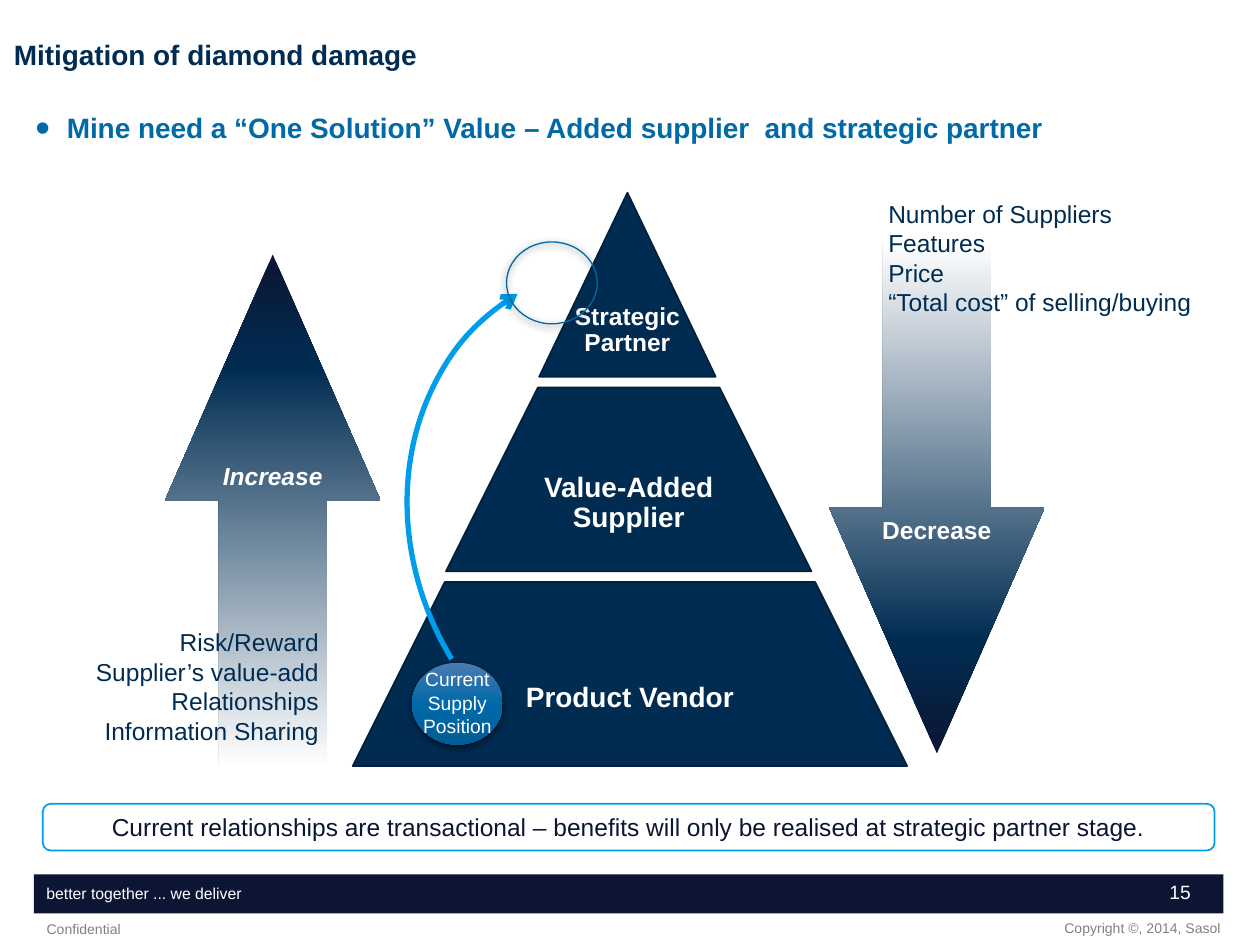
from lxml import etree
from pptx import Presentation
from pptx.dml.color import RGBColor
from pptx.enum.shapes import MSO_SHAPE as Shape
from pptx.enum.text import MSO_ANCHOR as Anchor, MSO_AUTO_SIZE as AutoSize, PP_ALIGN as Align
from pptx.oxml import parse_xml
from pptx.oxml.ns import nsdecls, qn
from pptx.util import Inches, Pt

NAVY, DARK, BLUE, SKY, WHITE, GREY = "002C52", "0C1533", "0069A8", "009DEB", "FFFFFF", "808080"
ARROW_STOPS = [(0, DARK), (22, NAVY), (100, WHITE)]
BALL_STOPS = [(0, "4B7BB2"), (50, BLUE), (100, "005D95")]


def rgb(value):
    """Turn a hex string into a colour."""
    return RGBColor.from_string(value)


def emu(box):
    """Turn a box in inches into lengths."""
    return [Inches(v) for v in box]


def write(sp, lines, size, color, align=Align.LEFT, anchor=Anchor.TOP,
          insets=(0.1, 0.05, 0.1, 0.05), spacing=None, **font):
    """Fill a shape with one formatted paragraph per line."""
    tf = sp.text_frame
    left, top, right, bottom = emu(insets)
    frame = {"word_wrap": True, "auto_size": AutoSize.NONE, "vertical_anchor": anchor,
             "margin_left": left, "margin_top": top, "margin_right": right,
             "margin_bottom": bottom}
    for name, value in frame.items():
        setattr(tf, name, value)
    tf.text = "\n".join(lines)
    font = {"name": "Arial", "size": Pt(size), **font}
    for p in tf.paragraphs:
        p.alignment, p.line_spacing, p.space_before = align, spacing, Pt(0)
        for r in p.runs:
            for name, value in font.items():
                setattr(r.font, name, value)
            r.font.color.rgb = rgb(color)


def add_label(slide, box, lines, size, color, **fmt):
    """Add a text box."""
    write(slide.shapes.add_textbox(*emu(box)), lines, size, color, **fmt)


def paint(sp, fill=None, line=None, width=1):
    """Set plain fill and outline and drop the shadow."""
    sp.shadow.inherit = False
    if fill:
        sp.fill.solid()
        sp.fill.fore_color.rgb = rgb(fill)
    else:
        sp.fill.background()
    if line:
        sp.line.color.rgb = rgb(line)
        sp.line.width = Pt(width)
    else:
        sp.line.fill.background()


def add_shape(slide, kind, box, **look):
    """Add a painted preset shape."""
    sp = slide.shapes.add_shape(kind, *emu(box))
    paint(sp, **look)
    return sp


def add_gradient(sp, stops):
    """Replace the fill by a top-to-bottom gradient."""
    gs = "".join(f'<a:gs pos="{pos * 1000}"><a:srgbClr val="{color}"/></a:gs>'
                 for pos, color in stops)
    grad = parse_xml(f'<a:gradFill {nsdecls("a")} rotWithShape="1"><a:gsLst>{gs}</a:gsLst>'
                     '<a:lin ang="5400000" scaled="0"/></a:gradFill>')
    old = sp.fill._xPr.find(qn("a:noFill"))
    old.getparent().replace(old, grad)


def add_shadow(sp):
    """Give a shape a soft shadow below it."""
    effects = sp._element.spPr.find(qn("a:effectLst"))
    effects.append(parse_xml(
        f'<a:outerShdw {nsdecls("a")} blurRad="{Pt(4.5)}" dist="{Pt(1.5)}" dir="5400000" '
        'rotWithShape="0"><a:srgbClr val="000000"><a:alpha val="63000"/></a:srgbClr>'
        '</a:outerShdw>'))


def add_footer(slide, box):
    """Draw the footer bar with page number and small print."""
    x, y, w, h = box
    bar = add_shape(slide, Shape.RECTANGLE, box, fill=DARK)
    write(bar, ["better together ... we deliver"], 9, WHITE, anchor=Anchor.MIDDLE, spacing=0.9)
    add_label(slide, (x + w - 2.41, y, 2.25, 0.3), ["15"], 11, WHITE, align=Align.RIGHT)
    small = {"anchor": Anchor.MIDDLE, "insets": (0, 0, 0, 0.04)}
    add_label(slide, (x + 4.77, y + 0.33, 4.65, 0.23), ["Copyright ©, 2014, Sasol"],
              8, GREY, align=Align.RIGHT, **small)
    add_label(slide, (x + 0.1, y + 0.34, 4.65, 0.23), ["Confidential"], 8, GREY, **small)


def add_heading(slide, title_box, body_box):
    """Place the title and the single bullet."""
    title, body = slide.shapes.title, slide.placeholders[1]
    for sp, box in ((title, title_box), (body, body_box)):
        sp.left, sp.top, sp.width, sp.height = emu(box)
    write(title, ["Mitigation of diamond damage"], 16, NAVY, anchor=Anchor.MIDDLE,
          spacing=0.9, bold=True)
    write(body, ["Mine need a “One Solution” Value – Added supplier  and strategic partner"],
          16, BLUE, spacing=0.9, bold=True)
    pPr = body.text_frame.paragraphs[0]._p.get_or_add_pPr()
    pPr.set("marL", str(Inches(0.25)))
    pPr.set("indent", str(Inches(-0.25)))
    for tag, name, value in (("a:buSzPct", "val", "150000"), ("a:buFont", "typeface", "Arial"),
                             ("a:buChar", "char", "•")):
        etree.SubElement(pPr, qn(tag)).set(name, value)


def add_pyramid(slide, box, tiers):
    """Draw tiers from the apex down, each wider than the one above."""
    x, y, w, h = box
    gap = 0.085
    tier_h = (h - gap * (len(tiers) - 1)) / len(tiers)
    for i, (text, size, side, drop) in enumerate(tiers):
        mid = x + w / 2 - 0.01 * (len(tiers) - 1 - i)
        top = y + i * (tier_h + gap)
        low = 0.7 + 0.75 * i
        high = max(0, low - 0.73)
        points = [emu(pt) for pt in ((mid - low, top + tier_h), (mid - high, top),
                                     (mid + high, top), (mid + low, top + tier_h))]
        builder = slide.shapes.build_freeform(*points[0], scale=1.0)
        builder.add_line_segments(points[1:], close=True)
        sp = builder.convert_to_shape()
        paint(sp, NAVY, "00213D")
        write(sp, [text], size, WHITE, align=Align.CENTER, anchor=Anchor.MIDDLE,
              insets=(side, drop, side, 0.03), spacing=0.9, bold=True)


def add_trend(slide, box, rotation, notes, notes_box, notes_fmt, name, name_top, **font):
    """Draw a fading arrow with its notes and its name."""
    x, _, w, _ = box
    sp = add_shape(slide, Shape.UP_ARROW, box)
    sp.adjustments[0], sp.adjustments[1] = 0.5, 1.141
    sp.rotation = rotation
    add_gradient(sp, ARROW_STOPS)
    add_label(slide, notes_box, notes, 14, NAVY, **notes_fmt)
    add_label(slide, (x + w / 2 - 1.03, name_top, 2.06, 0.34), [name], 14, WHITE,
              align=Align.CENTER, bold=True, **font)


def add_journey(slide, start_box, arc_box, goal_box):
    """Draw the move from the current position to the goal."""
    x, y, w, h = start_box
    ball = add_shape(slide, Shape.OVAL, start_box)
    add_gradient(ball, BALL_STOPS)
    add_shadow(ball)
    add_label(slide, (x - 0.15, y - 0.01, w + 0.3, h), ["Current Supply Position"], 11, WHITE,
              align=Align.CENTER)
    arc = add_shape(slide, Shape.ARC, arc_box, line=SKY, width=3)
    arc.rotation = 238.9
    etree.SubElement(arc.line._get_or_add_ln(), qn("a:tailEnd")).set("type", "arrow")
    add_shadow(add_shape(slide, Shape.OVAL, goal_box, line=BLUE, width=0.75))


def add_conclusion(slide, box):
    """Draw the framed closing statement."""
    sp = add_shape(slide, Shape.ROUNDED_RECTANGLE, box, fill=WHITE, line=SKY)
    write(sp, ["Current relationships are transactional – benefits will only be realised "
               "at strategic partner stage."], 14, DARK, align=Align.CENTER)


def main():
    """Build the slide and save it."""
    prs = Presentation()
    prs.slide_width, prs.slide_height = Inches(10), Inches(7.5)
    s = prs.slides.add_slide(prs.slide_layouts[1])
    add_heading(s, (0.01, 0.01, 7.02, 0.87), (0.18, 0.86, 9.43, 0.38))
    add_footer(s, (0.27, 6.94, 9.44, 0.31))
    add_pyramid(s, (2.8, 1.53, 4.4, 4.55), [
        ("Strategic Partner", 14, 0.03, 0.76),
        ("Value-Added Supplier", 16, 0.51, 0.41),
        ("Product Vendor", 16, 0.75, 0.41)])
    add_trend(s, (1.31, 2.02, 1.71, 4.06), 0,
              ["Risk/Reward", "Supplier’s value-add", "Relationships", "Information Sharing"],
              (-0.08, 4.93, 2.71, 1.04), {"align": Align.RIGHT}, "Increase", 3.61, italic=True)
    add_trend(s, (6.58, 1.92, 1.71, 4.06), 180,
              ["Number of Suppliers", "Features", "Price", "“Total cost” of selling/buying"],
              (6.45, 1.53, 3.45, 1.04), {"insets": (0.6, 0.05, 0.1, 0.05)}, "Decrease", 4.04)
    add_journey(s, (3.27, 5.26, 0.72, 0.65), (3.04, 2.28, 4.42, 3.89), (4.02, 1.92, 0.72, 0.65))
    add_conclusion(s, (0.34, 6.38, 9.3, 0.37))
    prs.save("out.pptx")


if __name__ == "__main__":
    main()
